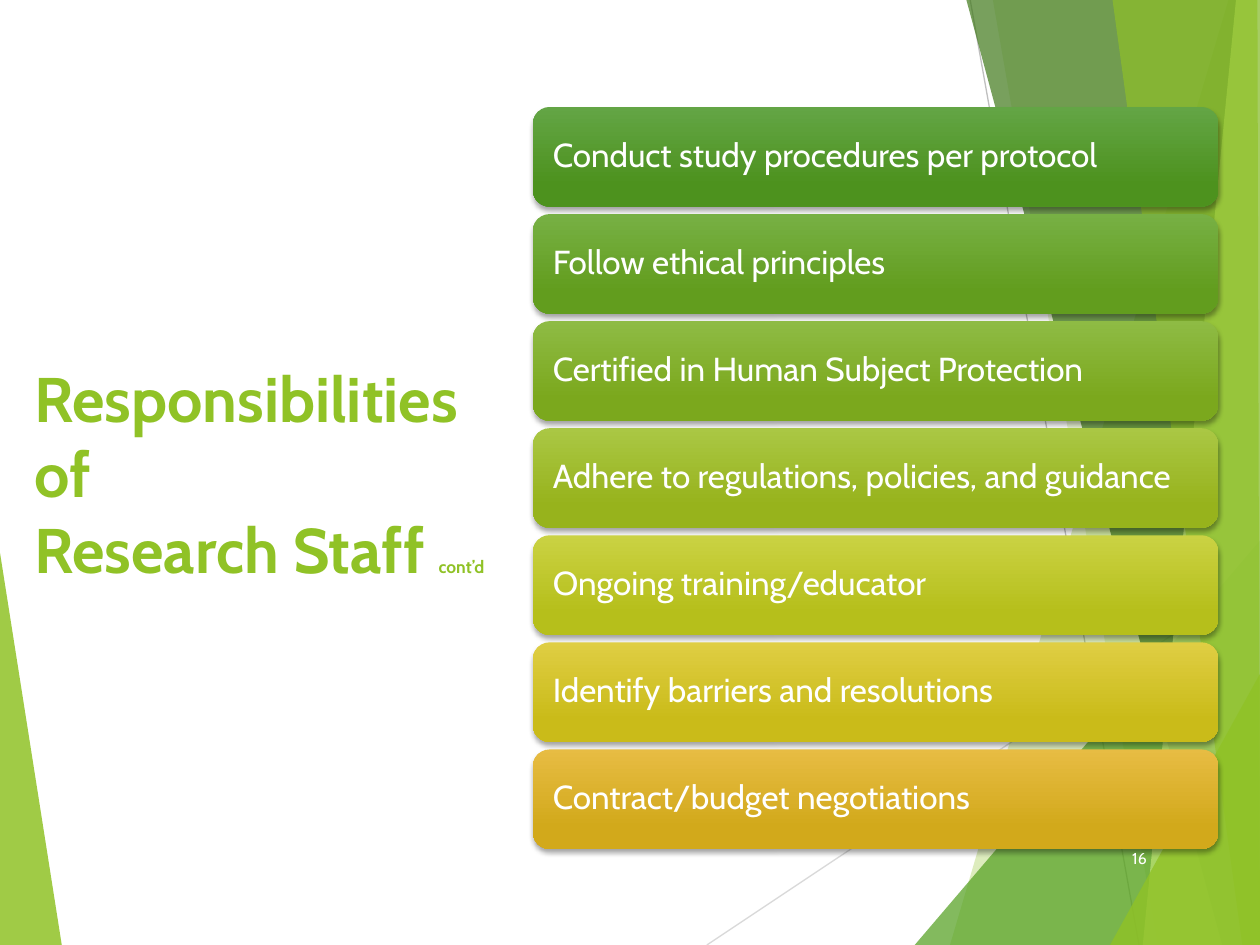
"""Build the slide on the responsibilities of research staff."""
from lxml.etree import SubElement as Sub
from pptx import Presentation
from pptx.dml.color import RGBColor
from pptx.enum.shapes import MSO_CONNECTOR as Link, MSO_SHAPE as Form
from pptx.enum.text import MSO_ANCHOR as Anchor, MSO_AUTO_SIZE as Fit, PP_ALIGN as Align
from pptx.oxml.ns import qn
from pptx.util import Inches, Pt

WIDE, HIGH = Inches(10), Inches(7.5)
FONT, LIME, WHITE = "Cabin", "90C226", "FFFFFF"
TITLE = [("Responsibilities of \vResearch Staff ", 36), ("cont’d", 10)]
DUTIES = [
    ("Conduct study procedures per protocol", "63A545", "4D921E"),
    ("Follow ethical principles", "77B044", "629D1E"),
    ("Certified in Human Subject Protection", "8EBB44", "7BA81D"),
    ("Adhere to regulations, policies, and guidance", "AAC744", "97B31C"),
    ("Ongoing training/educator", "CAD243", "B6BF1B"),
    ("Identify barriers and resolutions", "DFCE43", "CABB19"),
    ("Contract/budget negotiations", "E7BC43", "D2A91B"),
]
LEFT, TOP, STEP, BAR_W, BAR_H = 42.3, 11.33, 11.33, 54.4, 10.53
RAYS = [((56.1, 100), (100, 61), "D9D9D9"), ((77, 0), (90.4, 100), "BFBFBF")]
WEDGE = ([(0, 58.5), (4.9, 100), (0, 100)], LIME, 85)
FACETS = [
    ([(97.5, 0), (75.4, 100), (100, 100), (100, 0)], LIME, 30),
    ([(78.8, 0), (91.9, 100), (100, 100), (100, 0)], LIME, 20),
    ([(72.6, 100), (100, 57.2), (100, 100)], "54A021", 72),
    ([(76.7, 0), (97, 100), (100, 100), (100, 0)], "3F7819", 70),
    ([(98.1, 0), (90.7, 100), (100, 100), (100, 0)], "C0E474", 70),
    ([(88.3, 0), (98.6, 100), (100, 100), (99.8, 0)], LIME, 65),
    ([(88.1, 100), (100, 71.3), (100, 100)], LIME, 80),
]


def paint(obj, code):
    obj.rgb = RGBColor.from_string(code)


def at(x, y):
    return round(WIDE * x / 100), round(HIGH * y / 100)


def put(obj, vals):
    for name, val in vals.items():
        setattr(obj, name, val)


def write(frame, runs, color, bold=False, align=Align.LEFT, **vals):
    put(frame, {"word_wrap": True, "auto_size": Fit.NONE,
                "vertical_anchor": Anchor.MIDDLE} | vals)
    para = frame.paragraphs[0]
    para.alignment = align
    for text, size in runs:
        for num, part in enumerate(text.split("\v")):
            if num:
                para.add_line_break()
            run = para.add_run()
            run.text = part
            put(run.font, {"name": FONT, "size": Pt(size), "bold": bold})
            paint(run.font.color, color)
    return para


def facet(shapes, pts, color, alpha):
    pts = [at(*pt) for pt in pts]
    pen = shapes.build_freeform(*pts[0])
    pen.add_line_segments(pts[1:])
    shape = pen.convert_to_shape()
    shape.shadow.inherit = False
    shape.line.fill.background()
    shape.fill.solid()
    paint(shape.fill.fore_color, color)
    tone = shape.fill.fore_color._xFill.find(qn("a:srgbClr"))
    Sub(tone, qn("a:alpha"), val=str(alpha * 1000))


def ray(shapes, start, end, color):
    line = shapes.add_connector(Link.STRAIGHT, *at(*start), *at(*end))
    line.line.width = Pt(0.75)
    paint(line.line.color, color)
    Sub(line._element.spPr, qn("a:effectLst"))


def shade(shape):
    shape.shadow.inherit = False
    glow = shape._element.spPr.find(qn("a:effectLst"))
    drop = Sub(glow, qn("a:outerShdw"), blurRad=str(Pt(3)), dist=str(Pt(2)),
               dir="5400000", algn="ctr", rotWithShape="0")
    tone = Sub(drop, qn("a:srgbClr"), val="000000")
    Sub(tone, qn("a:alpha"), val="35000")


def bar(shapes, row, text, *tones):
    shape = shapes.add_shape(Form.ROUNDED_RECTANGLE, *at(LEFT, TOP + row * STEP),
                             *at(BAR_W, BAR_H))
    shape.line.fill.background()
    shape.fill.gradient()
    shape.fill.gradient_angle = 270
    for stop, spot, tone in zip(shape.fill.gradient_stops, (0, 0.78), tones):
        stop.position = spot
        paint(stop.color, tone)
    shade(shape)
    para = write(shape.text_frame, [(text, 19)], WHITE,
                 margin_left=Inches(0.12), margin_right=Inches(0.12))
    para.line_spacing = 0.9


def main():
    deck = Presentation()
    put(deck, {"slide_width": WIDE, "slide_height": HIGH})
    slide = deck.slides.add_slide(deck.slide_layouts[5])
    shapes = slide.shapes
    facet(shapes, *WEDGE)
    for item in RAYS:
        ray(shapes, *item)
    for item in FACETS:
        facet(shapes, *item)
    title = shapes.title
    put(title, dict(zip(("left", "top", "width", "height"),
                        at(1.7, 20.13) + at(38.6, 59.73))))
    write(title.text_frame, TITLE, LIME, True)
    for row, item in enumerate(DUTIES):
        bar(shapes, row, *item)
    page = shapes.add_textbox(*at(86.4, 88.13), *at(5.6, 5.33))
    write(page.text_frame, [("16", 9)], WHITE, align=Align.RIGHT)
    deck.save("out.pptx")


if __name__ == "__main__":
    main()
